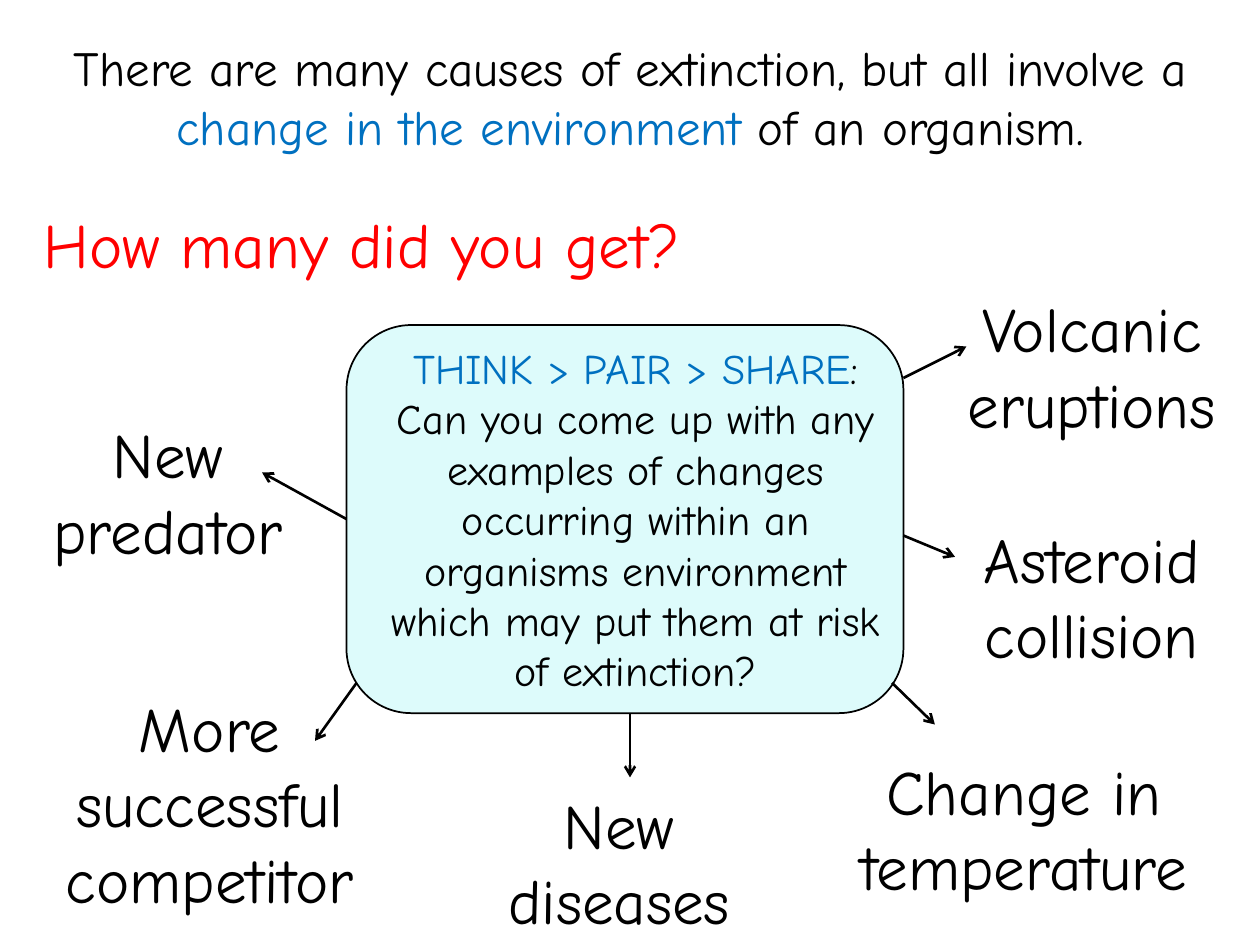
from lxml import etree
from pptx import Presentation
from pptx.dml.color import RGBColor
from pptx.enum.shapes import MSO_CONNECTOR, MSO_SHAPE
from pptx.enum.text import MSO_AUTO_SIZE, PP_ALIGN
from pptx.oxml.ns import qn
from pptx.util import Inches, Pt

CENTER, LEFT = PP_ALIGN.CENTER, PP_ALIGN.LEFT

THEME = {
    "font": "Comic Neue",
    "black": RGBColor(0, 0, 0),
    "blue": RGBColor(0x00, 0x70, 0xC0),
    "red": RGBColor(0xFF, 0, 0),
    "panel": RGBColor(0xDD, 0xFB, 0xFB),
    "intro": Pt(28),
    "question": Pt(24),
    "large": Pt(36),
}

PANEL = (2.75, 2.58, 4.42, 3.08)

# box, size, alignment, runs of (text, colour)
TEXTS = [
    ((0.25, 0.25, 9.5, 1.04), "intro", CENTER, [
        ("There are many causes of extinction, but all involve a ", "black"),
        ("change in the environment ", "blue"),
        ("of an organism.", "black"),
    ]),
    ((2.92, 2.67, 4.25, 2.93), "question", CENTER, [
        ("THINK > PAIR > SHARE", "blue"),
        (": Can you come up with any examples of changes occurring within an "
         "organisms environment which may put them at risk of extinction?", "black"),
    ]),
    ((0.25, 1.58, 5.83, 0.71), "large", LEFT, [("How many did you get?", "red")]),
]

# cause, text box, arrow start, arrow end
CAUSES = [
    ("New predator", (0.17, 3.25, 2.33, 1.31), (2.75, 4.12), (2.08, 3.75)),
    ("More successful competitor", (0.25, 5.42, 2.83, 1.92), (2.83, 5.42), (2.5, 5.88)),
    ("New diseases", (3.5, 6.19, 2.83, 1.31), (5, 5.67), (5, 6.17)),
    ("Change in temperature", (6.5, 5.92, 3.25, 1.31), (7.08, 5.42), (7.42, 5.75)),
    ("Volcanic eruptions", (7.33, 2.25, 2.67, 1.31), (7.17, 3), (7.67, 2.75)),
    ("Asteroid collision", (7.33, 4.08, 2.67, 1.31), (7.17, 4.25), (7.58, 4.42)),
]


def inches(values):
    return [Inches(v) for v in values]


def add_panel(s):
    sp = s.shapes.add_shape(MSO_SHAPE.ROUNDED_RECTANGLE, *inches(PANEL))
    sp.shadow.inherit = False
    sp.fill.solid()
    sp.fill.fore_color.rgb = THEME["panel"]
    sp.line.color.rgb = THEME["black"]
    sp.line.width = Pt(1)


def add_text(s, box, size, align, runs):
    tf = s.shapes.add_textbox(*inches(box)).text_frame
    tf.word_wrap = True
    tf.auto_size = MSO_AUTO_SIZE.SHAPE_TO_FIT_TEXT
    p = tf.paragraphs[0]
    p.alignment = align
    for text, color in runs:
        r = p.add_run()
        r.text = text
        r.font.name = THEME["font"]
        r.font.size = THEME[size]
        r.font.color.rgb = THEME[color]


def add_arrow(s, start, end):
    line = s.shapes.add_connector(MSO_CONNECTOR.STRAIGHT, *inches(start + end))
    line.line.color.rgb = THEME["black"]
    line.line.width = Pt(1.5)
    etree.SubElement(line.line._get_or_add_ln(), qn("a:tailEnd"), type="arrow")
    etree.SubElement(line._element.spPr, qn("a:effectLst"))


def main():
    prs = Presentation()
    prs.slide_width, prs.slide_height = Inches(10), Inches(7.5)
    s = prs.slides.add_slide(prs.slide_layouts[6])
    add_panel(s)
    for text in TEXTS:
        add_text(s, *text)
    for cause, box, start, end in CAUSES:
        add_text(s, box, "large", CENTER, [(cause, "black")])
        add_arrow(s, start, end)
    prs.save("out.pptx")


if __name__ == "__main__":
    main()
